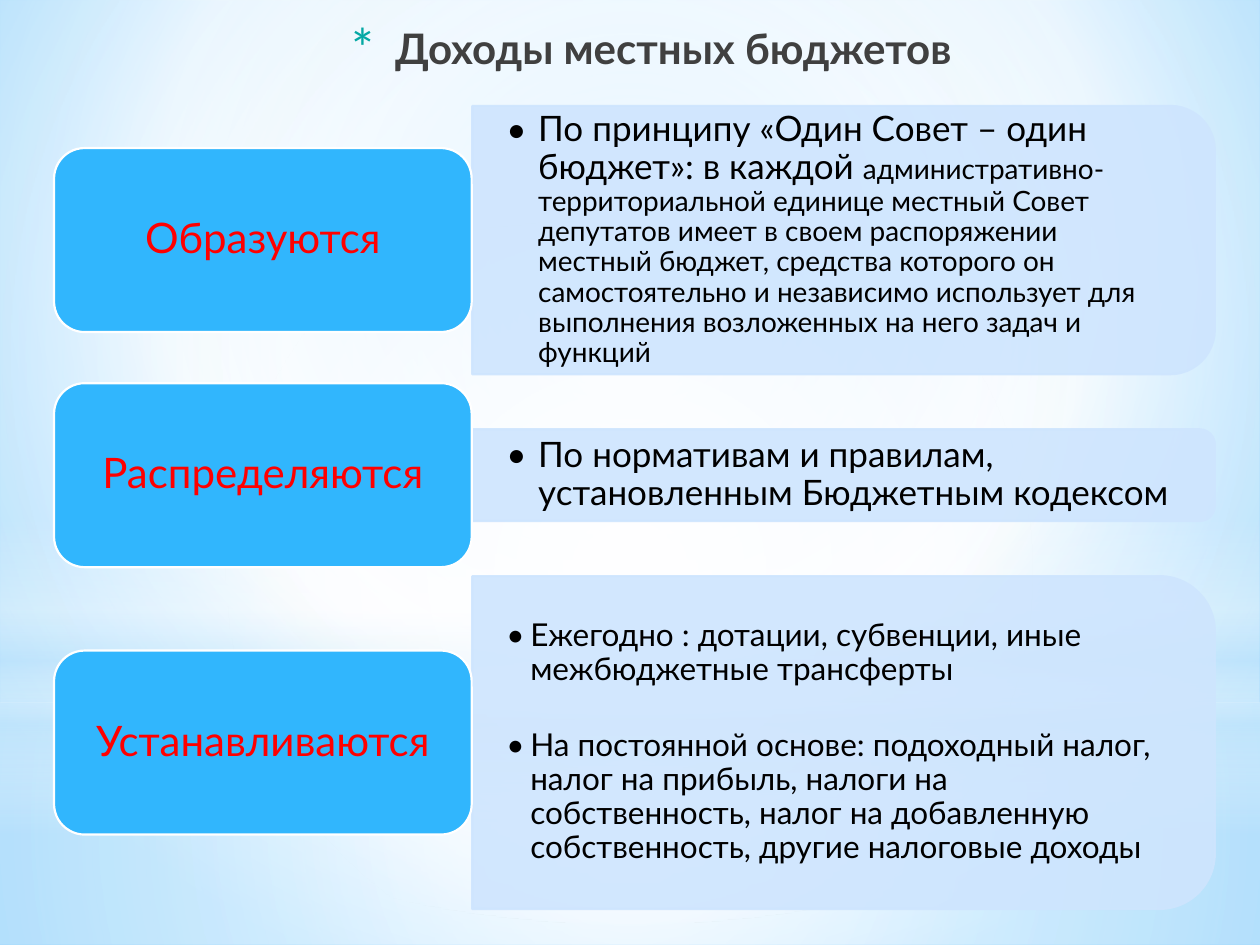
import dataclasses

import pptx
import pptx.dml.color
import pptx.enum.shapes
import pptx.enum.text
import pptx.oxml
import pptx.oxml.ns
import pptx.util
from lxml import etree

Cm = pptx.util.Cm
Pt = pptx.util.Pt
Color = pptx.dml.color.RGBColor.from_string
Shape = pptx.enum.shapes.MSO_SHAPE
Align = pptx.enum.text.PP_ALIGN
Anchor = pptx.enum.text.MSO_ANCHOR
qn = pptx.oxml.ns.qn


@dataclasses.dataclass(frozen=True)
class Theme:
    font: str = "Lato"
    title: str = "404040"
    star: str = "04A8A4"
    label_fill: str = "31B6FD"
    label_line: str = "FFFFFF"
    label_text: str = "FF0000"
    panel: str = "CEE5FE"
    text: str = "000000"
    white: str = "FFFFFF"
    pale: str = "C6E7FC"
    sky: str = "B0E0FF"
    deep_sky: str = "6BC5FF"
    heading_size: int = 24
    large: int = 20
    medium: int = 18
    small: int = 16


theme = Theme()


def set_gradient(owner, stops, focus=None):
    """Stops are (position, colour, opacity) in percent; no focus means top to bottom."""
    gradient = owner.element.find(".//" + qn("a:gradFill"))
    for child in list(gradient):
        gradient.remove(child)
    stop_list = etree.SubElement(gradient, qn("a:gsLst"))
    for position, color, opacity in stops:
        stop = etree.SubElement(stop_list, qn("a:gs"), pos=str(position * 1000))
        color_element = etree.SubElement(stop, qn("a:srgbClr"), val=color)
        etree.SubElement(color_element, qn("a:alpha"), val=str(opacity * 1000))
    if focus:
        path_element = etree.SubElement(gradient, qn("a:path"))
        path_element.set("path", "circle")
        sides = {side: str(value * 1000) for side, value in zip("ltrb", focus)}
        etree.SubElement(path_element, qn("a:fillToRect"), sides)
    else:
        etree.SubElement(gradient, qn("a:lin"), ang="5400000", scaled="0")


def write_paragraph(paragraph, runs, color, formats, bold=False, bullet=None, indent=0):
    """Runs are (text, size); bullet is (character, colour, percent of text size)."""
    for name, value in formats.items():
        setattr(paragraph, name, value)
    for text, size in runs:
        run = paragraph.add_run()
        run.text = text
        font = {"name": theme.font, "size": Pt(size), "bold": bold}
        for name, value in font.items():
            setattr(run.font, name, value)
        run.font.color.rgb = Color(color)
    if bullet:
        character, bullet_color, percent = bullet
        properties = paragraph._p.get_or_add_pPr()
        properties.set("marL", str(Cm(indent)))
        properties.set("indent", str(-Cm(indent)))
        color_element = etree.SubElement(properties, qn("a:buClr"))
        etree.SubElement(color_element, qn("a:srgbClr"), val=bullet_color)
        etree.SubElement(properties, qn("a:buSzPct"), val=str(percent * 1000))
        etree.SubElement(properties, qn("a:buFont"), typeface=theme.font)
        etree.SubElement(properties, qn("a:buChar"), char=character)


presentation = pptx.Presentation()
presentation.slide_width = Cm(25.4)
presentation.slide_height = Cm(19.05)
slide = presentation.slides.add_slide(presentation.slide_layouts[4])
title, *lists, spare = list(slide.placeholders)
spare.element.getparent().remove(spare.element)

# Background: a sky gradient with translucent glows over it
slide.background.fill.gradient()
set_gradient(
    slide,
    [(0, theme.sky, 100), (60, theme.white, 100), (100, theme.deep_sky, 100)],
    (20, 10, 20, 60),
)
center = (50, 50, 50, 50)
white, pale = theme.white, theme.pale
glows = [
    (Shape.RECTANGLE, 14.17, 4.88, center,
     [(0, white, 91), (37, white, 76), (100, pale, 79)]),
    (Shape.RECTANGLE, 0, 14.17, center,
     [(0, white, 89), (48, white, 62), (100, pale, 79)]),
    (Shape.RECTANGLE, 10.46, 6.35, None,
     [(0, white, 0), (29, white, 30), (45, pale, 40),
      (55, white, 26), (65, pale, 60), (100, white, 0)]),
    (Shape.OVAL, 4.45, 14.17, center, [(0, white, 100), (56, white, 0)]),
]
for kind, top, height, focus, stops in glows:
    glow = slide.shapes.add_shape(kind, 0, Cm(top), presentation.slide_width, Cm(height))
    glow.shadow.inherit = False
    glow.line.fill.background()
    glow.fill.gradient()
    set_gradient(glow, stops, focus)

# Title
slide.shapes._spTree.append(title.element)
title.left, title.top, title.width, title.height = Cm(4.09), Cm(0.33), Cm(18.08), Cm(2.59)
title.text_frame.vertical_anchor = Anchor.TOP
title.text_frame.auto_size = pptx.enum.text.MSO_AUTO_SIZE.NONE
write_paragraph(
    title.text_frame.paragraphs[0], [("Доходы местных бюджетов", theme.heading_size)],
    theme.title, {"alignment": Align.CENTER}, True, ("*", theme.star, 128), 0.89,
)

# Rows: label, middle line, panel height, list width, bullet indent, list items
rows = [
    ("Образуются", 4.84, 5.41, 14.71, 0.64, [
        [("По принципу «Один Совет – один бюджет»: в каждой ", theme.large),
         ("административно-территориальной единице местный Совет депутатов имеет "
          "в своем распоряжении местный бюджет, средства которого он самостоятельно "
          "и независимо использует для выполнения возложенных на него задач и функций",
          theme.small)],
    ]),
    ("Распределяются", 9.58, 1.85, 14.88, 0.64, [
        [("По нормативам и правилам, установленным Бюджетным кодексом", theme.large)],
    ]),
    ("Устанавливаются", 14.97, 6.71, 14.63, 0.48, [
        [("Ежегодно : дотации, субвенции, иные межбюджетные трансферты", theme.medium)],
        [("На постоянной основе: подоходный налог, налог на прибыль, налоги на "
          "собственность, налог на добавленную собственность, другие налоговые доходы",
          theme.medium)],
    ]),
]
label_left, label_width, label_height = 1.09, 8.42, 3.71
panel_left, panel_width = 9.52, 14.97

for body, (name, middle, height, width, indent, items) in zip(lists, rows):
    # Panel: two rounded corners, turned to face right
    panel = slide.shapes.add_shape(
        Shape.ROUND_2_SAME_RECTANGLE,
        Cm(panel_left + (panel_width - height) / 2), Cm(middle - panel_width / 2),
        Cm(height), Cm(panel_width),
    )
    panel.rotation = 90

    # Label
    label = slide.shapes.add_shape(
        Shape.ROUNDED_RECTANGLE, Cm(label_left), Cm(middle - label_height / 2),
        Cm(label_width), Cm(label_height),
    )
    label.text_frame.vertical_anchor = Anchor.MIDDLE
    write_paragraph(
        label.text_frame.paragraphs[0], [(name, theme.heading_size)], theme.label_text,
        {"alignment": Align.CENTER, "line_spacing": 0.9},
    )
    for shape, fill, line in (
        (panel, theme.panel, theme.panel),
        (label, theme.label_fill, theme.label_line),
    ):
        shape.shadow.inherit = False
        shape.fill.solid()
        shape.fill.fore_color.rgb = Color(fill)
        shape.line.color.rgb = Color(line)
        shape.line.width = Pt(1.25)
    for color_element in panel.element.spPr.iter(qn("a:srgbClr")):
        etree.SubElement(color_element, qn("a:alpha"), val="90000")

    # List
    slide.shapes._spTree.append(body.element)
    body.left, body.top = Cm(panel_left), Cm(middle - height / 2)
    body.width, body.height = Cm(width), Cm(height)
    frame_format = {
        "margin_left": Cm(0.69), "margin_right": Cm(0.69), "margin_top": 0,
        "margin_bottom": 0, "vertical_anchor": Anchor.MIDDLE, "word_wrap": True,
        "auto_size": pptx.enum.text.MSO_AUTO_SIZE.NONE,
    }
    for attribute, value in frame_format.items():
        setattr(body.text_frame, attribute, value)
    for index, runs in enumerate(items):
        paragraph = body.text_frame.add_paragraph() if index else body.text_frame.paragraphs[0]
        formats = {"alignment": Align.LEFT, "line_spacing": 0.9,
                   "space_before": Pt(24 if index else 0), "space_after": Pt(0)}
        write_paragraph(paragraph, runs, theme.text, formats,
                        bullet=("•", theme.text, 100), indent=indent)

presentation.save("out.pptx")
